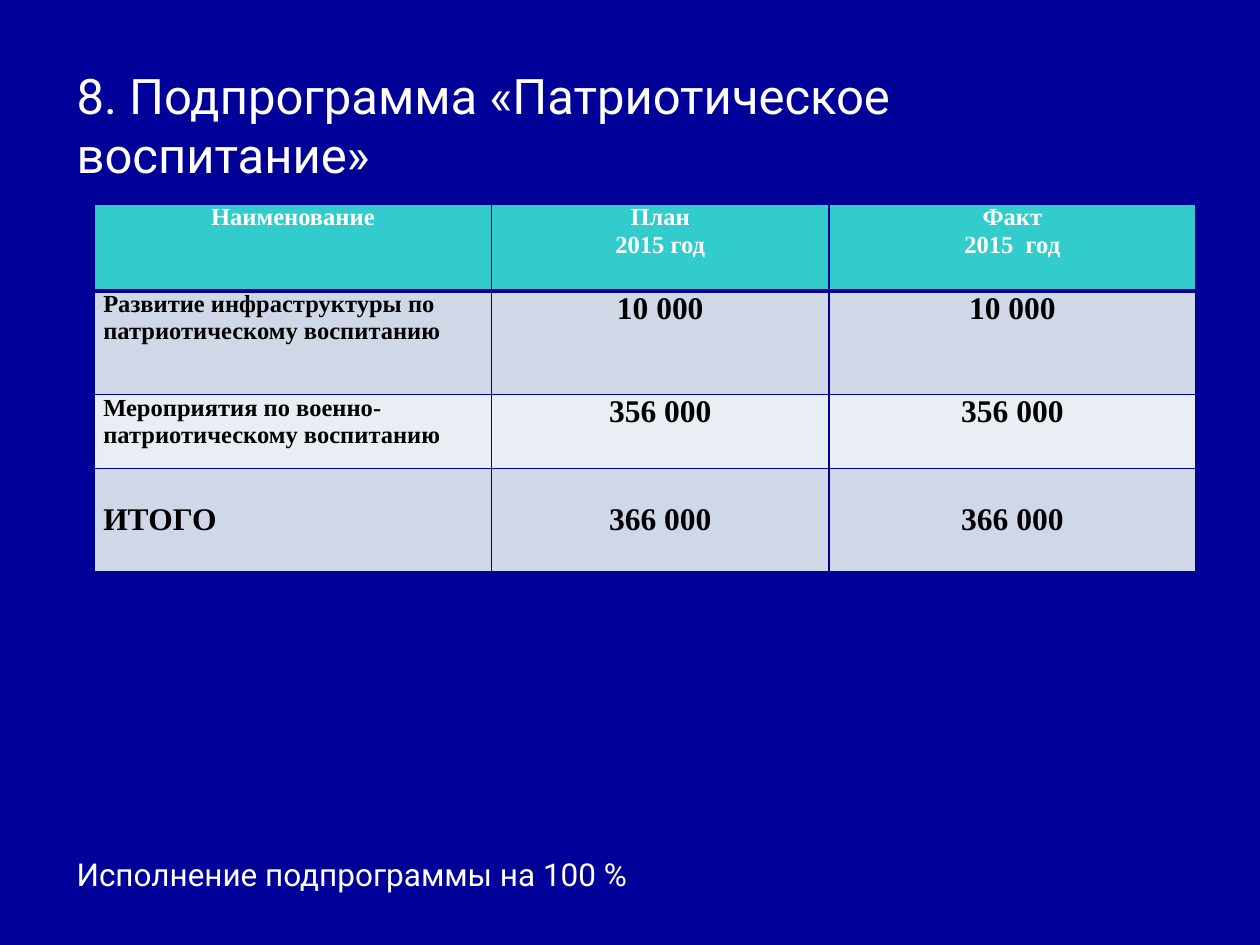
from pptx import Presentation
from pptx.dml.color import RGBColor
from pptx.enum.text import MSO_ANCHOR, PP_ALIGN
from pptx.oxml.xmlchemy import OxmlElement
from pptx.util import Inches, Pt

COLORS = {"navy": "000099", "teal": "33CCCC", "band": "D0D8E8",
          "pale": "E9EDF4", "white": "FFFFFF", "black": "000000"}


def write(frame, text, size=18, font="Roboto", color="white", bold=False,
          align=PP_ALIGN.LEFT):
    frame.word_wrap = True
    for i, line in enumerate(text.split("\n")):
        par = frame.paragraphs[0] if i == 0 else frame.add_paragraph()
        par.alignment = align
        run = par.add_run()
        run.text = line
        run.font.size = Pt(size)
        run.font.name = font
        run.font.bold = bold
        run.font.color.rgb = RGBColor.from_string(COLORS[color])


def add_edge(cell, side, width):
    edge = OxmlElement(f"a:{side}")
    edge.set("w", str(Pt(width)))
    fill = OxmlElement("a:solidFill")
    color = OxmlElement("a:srgbClr")
    color.set("val", COLORS["navy"])
    fill.append(color)
    edge.append(fill)
    cell._tc.get_or_add_tcPr().append(edge)


prs = Presentation()
prs.slide_width, prs.slide_height = Inches(10), Inches(7.5)
slide = prs.slides.add_slide(prs.slide_layouts[6])
slide.background.fill.solid()
slide.background.fill.fore_color.rgb = RGBColor.from_string(COLORS["navy"])

# Title
title = slide.shapes.add_textbox(Inches(0.51), Inches(0.44), Inches(9), Inches(1.1))
title.text_frame.vertical_anchor = MSO_ANCHOR.MIDDLE
write(title.text_frame, "8. Подпрограмма «Патриотическое воспитание»", size=28)

# Budget table
rows = [
    ("Наименование", "План\n2015 год", "Факт\n2015  год"),
    ("Развитие инфраструктуры по патриотическому воспитанию", "10 000", "10 000"),
    ("Мероприятия по военно-патриотическому воспитанию", "356 000", "356 000"),
    ("ИТОГО", "366 000", "366 000"),
]
fills = ["teal", "band", "pale", "band"]
widths = [3.15, 2.68, 2.91]
heights = [0.69, 0.82, 0.59, 0.82]
last = len(rows) - 1

table = slide.shapes.add_table(len(rows), len(widths), Inches(0.75), Inches(1.62),
                               Inches(sum(widths)), Inches(sum(heights))).table
for col, width in zip(table.columns, widths):
    col.width = Inches(width)
for row, height in zip(table.rows, heights):
    row.height = Inches(height)

for r, texts in enumerate(rows):
    for c, text in enumerate(texts):
        cell = table.cell(r, c)
        cell.margin_left = cell.margin_right = Inches(0.07)
        cell.margin_top = cell.margin_bottom = 0
        cell.vertical_anchor = MSO_ANCHOR.MIDDLE if r == last else MSO_ANCHOR.TOP
        # Edges go before the fill; a thick rule sits under the header
        for side in ("lnL", "lnR", "lnT", "lnB"):
            thick = (r, side) in ((0, "lnB"), (1, "lnT"))
            add_edge(cell, side, 3 if thick else 1)
        cell.fill.solid()
        cell.fill.fore_color.rgb = RGBColor.from_string(COLORS[fills[r]])
        small = r == 0 or (c == 0 and r < last)
        write(cell.text_frame, text, size=14 if small else 18,
              font="Times New Roman", bold=True,
              color="white" if r == 0 else "black",
              align=PP_ALIGN.CENTER if r == 0 or c > 0 else PP_ALIGN.LEFT)

# Closing note
note = slide.shapes.add_textbox(Inches(0.51), Inches(6.74), Inches(8.66), Inches(0.4))
write(note.text_frame, "Исполнение подпрограммы на 100 %")

prs.save("out.pptx")
